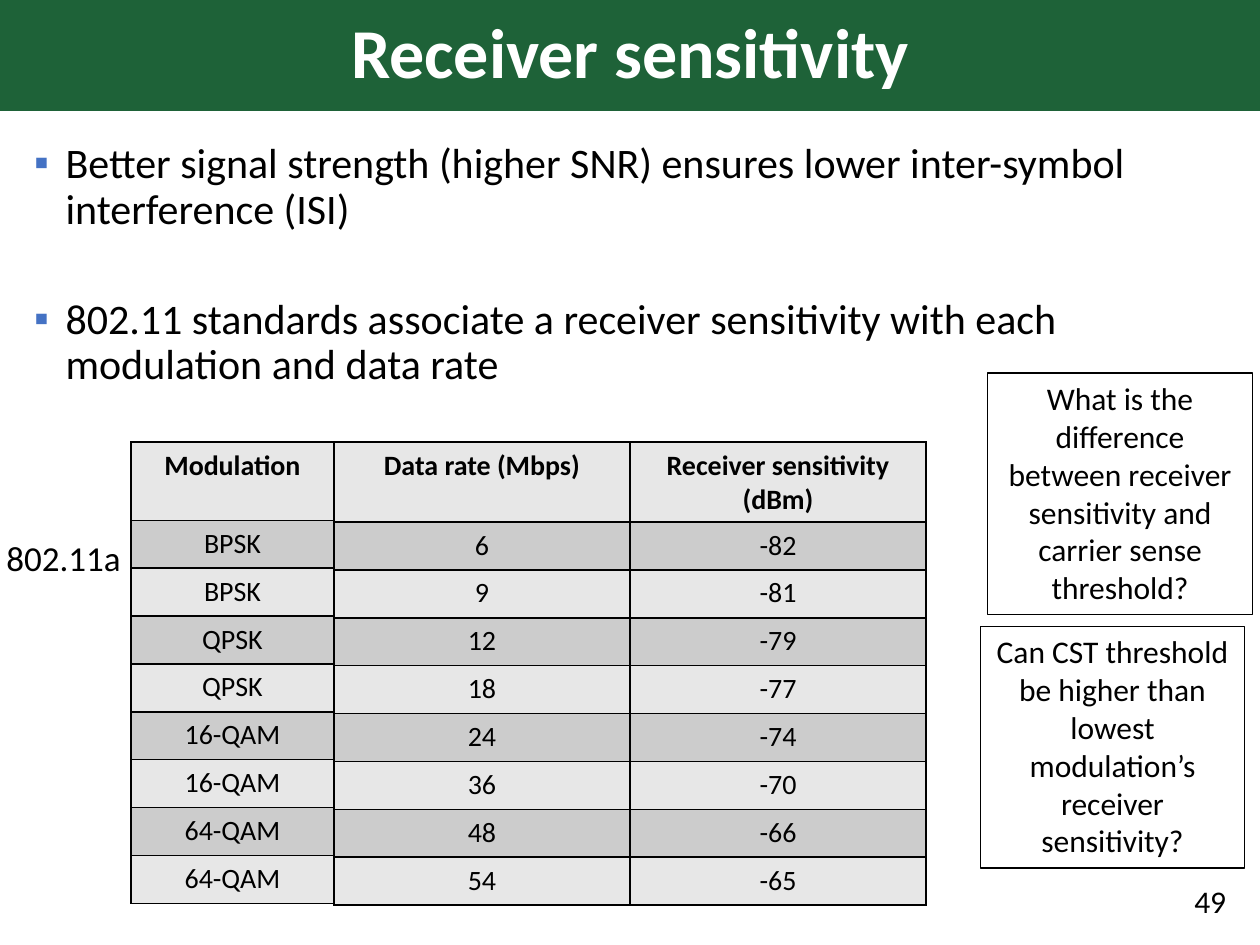
from lxml.etree import SubElement
from pptx import Presentation
from pptx.dml.color import RGBColor
from pptx.enum.shapes import MSO_SHAPE as Shape
from pptx.enum.text import MSO_ANCHOR as Anchor, MSO_AUTO_SIZE as AutoSize, PP_ALIGN as Align
from pptx.oxml.ns import qn
from pptx.util import Inches, Pt

FONT = "Calibri"
BLACK, WHITE, GREEN, BLUE = "000000", "FFFFFF", "1E6238", "4472C4"
BANDS = ("E7E7E7", "CCCCCC")
TABLE_TOP, ROW_HEIGHT = 3.51, 0.38

BULLETS = [
    ("Better signal strength (higher SNR) ensures lower inter-symbol interference (ISI)", 10),
    ("802.11 standards associate a receiver sensitivity with each modulation and data rate", 37),
]
RATES = [
    ("Data rate (Mbps)", "Receiver sensitivity (dBm)"),
    ("6", "-82"), ("9", "-81"), ("12", "-79"), ("18", "-77"),
    ("24", "-74"), ("36", "-70"), ("48", "-66"), ("54", "-65"),
]
MODULATIONS = [
    (name,) for name in ("Modulation", "BPSK", "BPSK", "QPSK", "QPSK",
                         "16-QAM", "16-QAM", "64-QAM", "64-QAM")
]
QUESTIONS = [
    ("What is the difference between receiver sensitivity and carrier sense threshold?", 7.84, 2.96),
    ("Can CST threshold be higher than lowest modulation’s receiver sensitivity?", 7.78, 4.97),
]


def color(hex_value):
    return RGBColor.from_string(hex_value)


def set_values(target, values):
    for name, value in values.items():
        setattr(target, name, value)


def place(shape, left, top, width, height):
    set_values(shape, {"left": Inches(left), "top": Inches(top),
                       "width": Inches(width), "height": Inches(height)})


def write(para, text, size, hex_value=BLACK, bold=False, **para_format):
    set_values(para, para_format)
    span = para.add_run()
    span.text = text
    set_values(span.font, {"name": FONT, "size": Pt(size), "bold": bold})
    span.font.color.rgb = color(hex_value)


def add_bullet_mark(para):
    properties = para._p.get_or_add_pPr()
    properties.set("marL", str(Inches(0.25)))
    properties.set("indent", str(Inches(-0.25)))
    mark_color = SubElement(properties, qn("a:buClr"))
    SubElement(mark_color, qn("a:srgbClr"), val=BLUE)
    SubElement(properties, qn("a:buFont"), typeface="Arial")
    SubElement(properties, qn("a:buChar"), char="▪")


def fill_title(title, text):
    place(title, 0, 0, 10, 0.88)
    title.fill.solid()
    title.fill.fore_color.rgb = color(GREEN)
    set_values(title.text_frame, {"vertical_anchor": Anchor.MIDDLE, "auto_size": AutoSize.NONE})
    write(title.text_frame.paragraphs[0], text, 40, WHITE, True,
          alignment=Align.CENTER, line_spacing=0.9)


def fill_body(body, bullets):
    place(body, 0.17, 1.08, 9.65, 6.27)
    frame = body.text_frame
    set_values(frame, {"vertical_anchor": Anchor.TOP, "auto_size": AutoSize.NONE})
    for index, (text, space) in enumerate(bullets):
        para = frame.add_paragraph() if index else frame.paragraphs[0]
        write(para, text, 24, line_spacing=0.9, space_before=Pt(space))
        add_bullet_mark(para)


def add_label(page, text, at, size, alignment, anchor=Anchor.TOP):
    box = page.shapes.add_textbox(*map(Inches, at))
    set_values(box.text_frame, {"word_wrap": True, "vertical_anchor": anchor})
    write(box.text_frame.paragraphs[0], text, size, alignment=alignment)


def add_question(page, text, left, top):
    box = page.shapes.add_shape(Shape.RECTANGLE, *map(Inches, (left, top, 2.1, 1.92)))
    box.shadow.inherit = False
    box.fill.background()
    box.line.color.rgb = color(BLACK)
    box.line.width = Pt(0.75)
    set_values(box.text_frame, {"word_wrap": True, "vertical_anchor": Anchor.TOP})
    write(box.text_frame.paragraphs[0], text, 18, alignment=Align.CENTER)


def add_borders(cell):
    properties = cell._tc.get_or_add_tcPr()
    for side in ("lnL", "lnR", "lnT", "lnB"):
        line = SubElement(properties, qn(f"a:{side}"), w=str(Pt(1)))
        fill = SubElement(line, qn("a:solidFill"))
        SubElement(fill, qn("a:srgbClr"), val=BLACK)


def add_banded_table(page, rows, left, column_width, header_height):
    columns = len(rows[0])
    height = header_height + ROW_HEIGHT * (len(rows) - 1)
    table = page.shapes.add_table(
        len(rows), columns, Inches(left), Inches(TABLE_TOP),
        Inches(column_width * columns), Inches(height)).table
    for column in table.columns:
        column.width = Inches(column_width)
    for row_index, values in enumerate(rows):
        table.rows[row_index].height = Inches(ROW_HEIGHT if row_index else header_height)
        for column_index, text in enumerate(values):
            cell = table.cell(row_index, column_index)
            add_borders(cell)
            cell.fill.solid()
            cell.fill.fore_color.rgb = color(BANDS[row_index % 2])
            write(cell.text_frame.paragraphs[0], text, 16, bold=row_index == 0,
                  alignment=Align.CENTER)


def main():
    deck = Presentation()
    set_values(deck, {"slide_width": Inches(10), "slide_height": Inches(7.5)})
    page = deck.slides.add_slide(deck.slide_layouts[1])
    fill_title(page.shapes.title, "Receiver sensitivity")
    fill_body(page.placeholders[1], BULLETS)
    add_label(page, "49", (7.58, 6.95, 2.25, 0.4), 18, Align.RIGHT, Anchor.MIDDLE)
    add_banded_table(page, RATES, 2.65, 2.35, 0.56)
    add_label(page, "802.11a", (-0.09, 4.21, 1.19, 0.44), 20, Align.CENTER)
    add_banded_table(page, MODULATIONS, 1.04, 1.61, 0.62)
    for text, left, top in QUESTIONS:
        add_question(page, text, left, top)
    deck.save("out.pptx")


if __name__ == "__main__":
    main()
